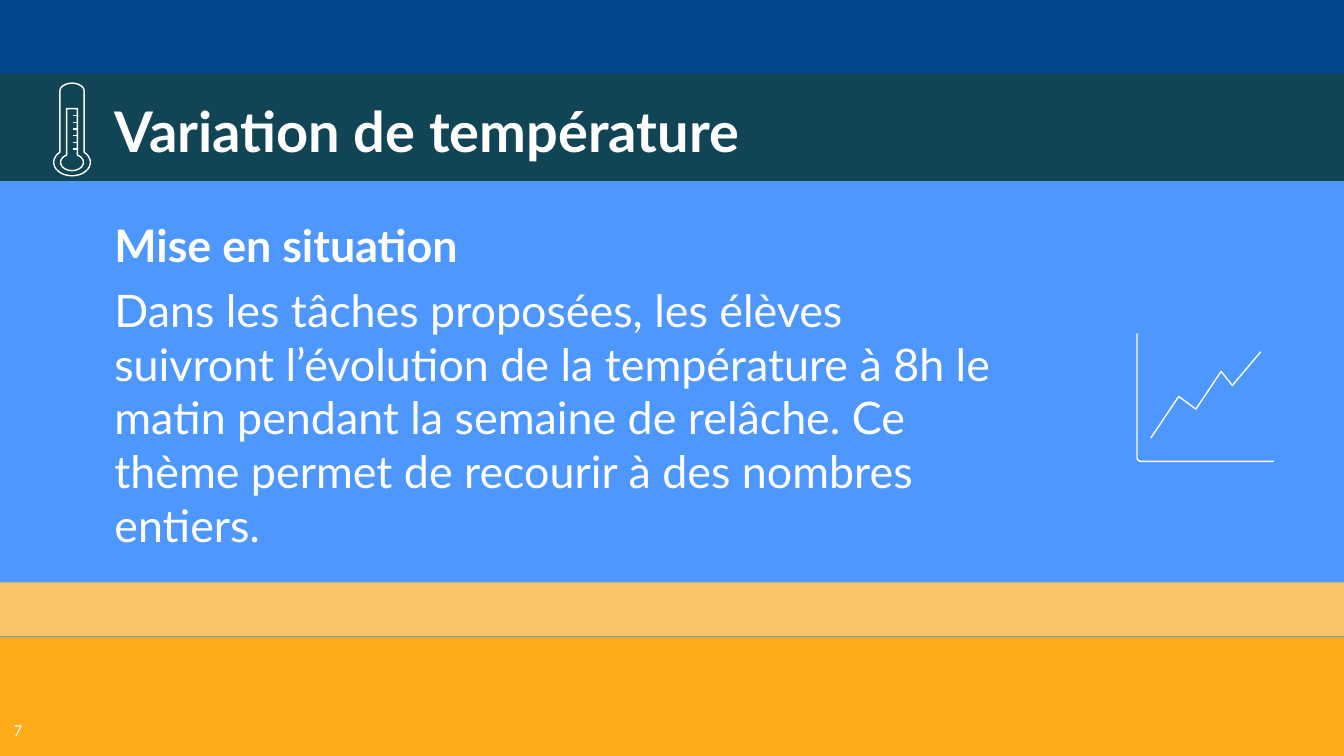
from dataclasses import dataclass
from math import asin, cos, pi, sin

from lxml.etree import SubElement
from pptx import Presentation
from pptx.dml.color import RGBColor
from pptx.enum.shapes import MSO_CONNECTOR, MSO_SHAPE
from pptx.enum.text import MSO_ANCHOR, MSO_AUTO_SIZE, PP_ALIGN
from pptx.oxml.ns import qn
from pptx.util import Pt


@dataclass(frozen=True)
class Theme:
    font: str = "Lato"
    background: str = "4D97FF"
    navy: str = "01478D"
    teal: str = "114454"
    sand: str = "FAC467"
    orange: str = "FFAB19"
    white: str = "FFFFFF"
    title_size: float = 30
    body_size: float = 24
    number_size: float = 8
    line_width: float = 0.75
    inset: float = 7.2


def color(value):
    return RGBColor.from_string(value)


def write_text(paragraph, text, *, theme, size, bold=False, align=PP_ALIGN.LEFT, before=0):
    paragraph.alignment = align
    paragraph.space_before = Pt(before)
    run = paragraph.add_run()
    run.text = text
    run.font.name = theme.font
    run.font.size = Pt(size)
    run.font.bold = bold
    run.font.color.rgb = color(theme.white)


def arc(center_x, center_y, radius_x, radius_y, start, end, steps=36):
    angles = [start + (end - start) * step / steps for step in range(steps + 1)]
    return [(center_x + radius_x * cos(angle), center_y + radius_y * sin(angle)) for angle in angles]


def bulb(center_x, center_y, radius_x, radius_y, neck):
    joint = asin((1 - (neck / radius_x) ** 2) ** 0.5)
    return arc(center_x, center_y, radius_x, radius_y, -joint, pi + joint)


class SlideBuilder:
    def __init__(self, slide, theme):
        self.slide = slide
        self.theme = theme
        slide.background.fill.solid()
        slide.background.fill.fore_color.rgb = color(theme.background)

    def band(self, top, height, fill):
        shape = self.slide.shapes.add_shape(MSO_SHAPE.RECTANGLE, 0, Pt(top), Pt(720), Pt(height))
        shape.shadow.inherit = False
        shape.fill.solid()
        shape.fill.fore_color.rgb = color(fill)
        shape.line.fill.background()

    def frame(self, shape, anchor):
        frame = shape.text_frame
        frame.word_wrap = True
        frame.auto_size = MSO_AUTO_SIZE.NONE
        frame.vertical_anchor = anchor
        inset = Pt(self.theme.inset)
        frame.margin_left = frame.margin_right = inset
        frame.margin_top = frame.margin_bottom = inset
        return frame

    def title(self, text, left, top, width, height):
        title = self.slide.shapes.title
        title.left, title.top, title.width, title.height = map(Pt, (left, top, width, height))
        title.element.getparent().append(title.element)
        frame = self.frame(title, MSO_ANCHOR.MIDDLE)
        write_text(frame.paragraphs[0], text, theme=self.theme, size=self.theme.title_size, bold=True)

    def text_box(self, left, top, width, height, anchor=MSO_ANCHOR.TOP):
        box = self.slide.shapes.add_textbox(Pt(left), Pt(top), Pt(width), Pt(height))
        return self.frame(box, anchor)

    def group(self):
        return self.slide.shapes.add_group_shape()

    def style_line(self, shape):
        shape.line.color.rgb = color(self.theme.white)
        shape.line.width = Pt(self.theme.line_width)

    def outline(self, group, points, close=False):
        first, *rest = [(Pt(x), Pt(y)) for x, y in points]
        builder = group.shapes.build_freeform(*first, scale=1.0)
        builder.add_line_segments(rest, close=close)
        shape = builder.convert_to_shape()
        shape.shadow.inherit = False
        shape.fill.background()
        self.style_line(shape)

    def line(self, group, start, end):
        connector = group.shapes.add_connector(MSO_CONNECTOR.STRAIGHT, *map(Pt, start + end))
        self.style_line(connector)
        SubElement(connector.element.spPr, qn("a:effectLst"))


def draw_trend_icon(builder):
    icon = builder.group()
    corner = arc(611.3, 245, 2.2, 2.2, pi, pi / 2, steps=8)
    builder.outline(icon, [(609.1, 178.6), *corner, (682.5, 247.2)])
    trend = [(616.5, 234.7), (631.5, 212.4), (640.7, 219.2), (654.2, 199), (660.2, 206.5), (675.4, 188.5)]
    builder.outline(icon, trend)


def draw_thermometer(builder):
    icon = builder.group()
    center_x, bulb_y = 38.6, 87
    tube, column = 6.5, 2.9
    cap = arc(center_x, 48.9, tube, 4.3, pi, 2 * pi)
    builder.outline(icon, cap + bulb(center_x, bulb_y, 9.8, 7.2, tube), close=True)
    column_top = [(center_x - column, 58.2), (center_x + column, 58.2)]
    builder.outline(icon, column_top + bulb(center_x, bulb_y, 6.1, 4.4, column), close=True)
    for index in range(6):
        y = 61.9 + 3.6 * index
        builder.line(icon, (center_x + column, y), (center_x + 0.7, y))


def main():
    theme = Theme()
    presentation = Presentation()
    presentation.slide_width, presentation.slide_height = Pt(720), Pt(405)
    slide = presentation.slides.add_slide(presentation.slide_layouts[5])
    builder = SlideBuilder(slide, theme)

    bands = [(0, 41.8, theme.navy), (39.3, 57.7, theme.teal), (312, 28.7, theme.sand), (341.2, 63.8, theme.orange)]
    for top, height, fill in bands:
        builder.band(top, height, fill)

    builder.title("Variation de température", 54.2, 39.5, 519, 60)

    body = builder.text_box(54.2, 99.5, 488, 213, MSO_ANCHOR.MIDDLE)
    write_text(body.paragraphs[0], "Mise en situation", theme=theme, size=theme.body_size, bold=True, before=6)
    write_text(
        body.add_paragraph(),
        "Dans les tâches proposées, les élèves suivront l’évolution de la température à 8h le matin "
        "pendant la semaine de relâche. Ce thème permet de recourir à des nombres entiers.",
        theme=theme, size=theme.body_size, before=6,
    )

    number = builder.text_box(-4.1, 379.5, 27.4, 25.5)
    write_text(number.paragraphs[0], "7", theme=theme, size=theme.number_size, align=PP_ALIGN.CENTER)

    draw_trend_icon(builder)
    draw_thermometer(builder)
    presentation.save("out.pptx")


if __name__ == "__main__":
    main()
